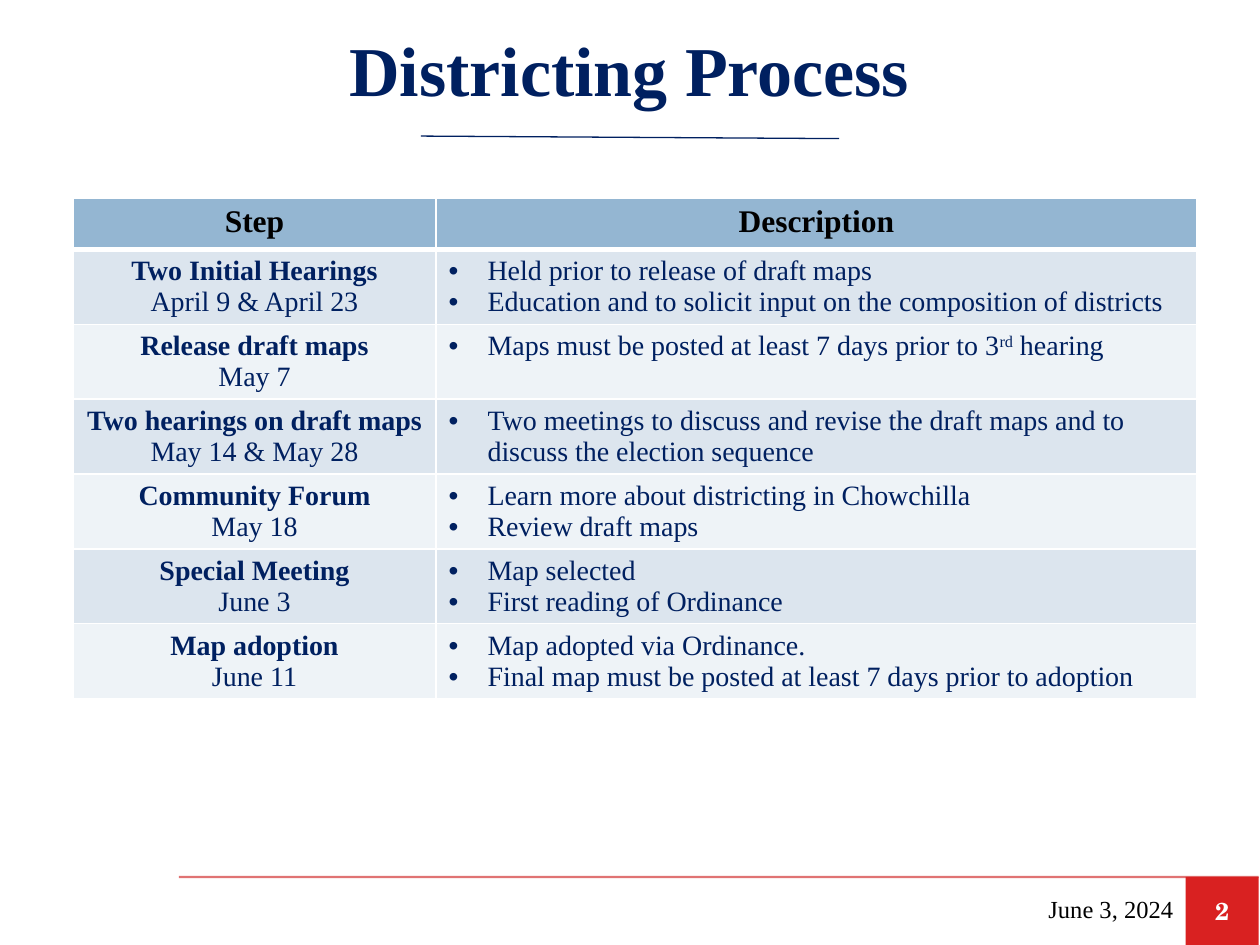
from lxml import etree
from pptx import Presentation
from pptx.dml.color import RGBColor
from pptx.enum.shapes import MSO_CONNECTOR, MSO_SHAPE
from pptx.enum.text import MSO_ANCHOR, MSO_AUTO_SIZE, PP_ALIGN
from pptx.oxml.ns import qn
from pptx.util import Inches, Pt

LEFT, CENTER, RIGHT = PP_ALIGN.LEFT, PP_ALIGN.CENTER, PP_ALIGN.RIGHT
MIDDLE = MSO_ANCHOR.MIDDLE

TITLE = "Districting Process"
DATE = "June 3, 2024"
PAGE = "2"
HEADERS = ("Step", "Description")
# Step name, dates, description bullets; a tuple bullet is (text, superscript, text)
STEPS = [
    ("Two Initial Hearings", "April 9 & April 23",
     ["Held prior to release of draft maps",
      "Education and to solicit input on the composition of districts"]),
    ("Release draft maps", "May 7",
     [("Maps must be posted at least 7 days prior to 3", "rd", " hearing")]),
    ("Two hearings on draft maps", "May 14 & May 28",
     ["Two meetings to discuss and revise the draft maps and to discuss the election sequence"]),
    ("Community Forum", "May 18",
     ["Learn more about districting in Chowchilla", "Review draft maps"]),
    ("Special Meeting", "June 3",
     ["Map selected", "First reading of Ordinance"]),
    ("Map adoption", "June 11",
     ["Map adopted via Ordinance.",
      "Final map must be posted at least 7 days prior to adoption"]),
]

SERIF = "Times New Roman"
THEME = {
    "navy": "002060", "white": "FFFFFF", "red": "D92121", "rule": "C80000",
    "header": "94B6D2", "bands": ("DCE5EE", "EEF3F7"),
    "title": {"name": SERIF, "size": 40, "bold": True, "color": "002060"},
    "head": {"name": SERIF, "size": 18, "bold": True, "color": "000000"},
    "step": {"name": SERIF, "size": 16, "bold": True, "color": "002060"},
    "body": {"name": SERIF, "size": 16, "bold": False, "color": "002060"},
    "date": {"name": SERIF, "size": 14, "bold": False, "color": "000000"},
    "page": {"name": "TeX Gyre Schola", "size": 14, "bold": True, "color": "FFFFFF"},
}
COLUMNS = (2.88, 6.04)
ROW_HEIGHT = 0.41  # rows grow to fit two lines of text
FOOTER_TOP = 6.96
BULLET_INDENT = Inches(0.31)


def rgb(value):
    return RGBColor.from_string(value)


def add_run(paragraph, text, style):
    run = paragraph.add_run()
    run.text = text
    formats = dict(THEME[style])
    run.font.color.rgb = rgb(formats.pop("color"))
    formats["size"] = Pt(formats["size"])
    for name, value in formats.items():
        setattr(run.font, name, value)
    return run


def write_lines(text_frame, lines, align):
    """Write (text, style) pairs, one paragraph each."""
    for index, (text, style) in enumerate(lines):
        paragraph = text_frame.add_paragraph() if index else text_frame.paragraphs[0]
        paragraph.alignment = align
        add_run(paragraph, text, style)


def write_bullets(text_frame, bullets):
    for index, bullet in enumerate(bullets):
        paragraph = text_frame.add_paragraph() if index else text_frame.paragraphs[0]
        paragraph.alignment = LEFT
        properties = paragraph._p.get_or_add_pPr()
        properties.set("marL", str(BULLET_INDENT))
        properties.set("indent", str(-BULLET_INDENT))
        etree.SubElement(properties, qn("a:buFont"), typeface="Arial")
        etree.SubElement(properties, qn("a:buChar"), char="•")
        parts = (bullet,) if isinstance(bullet, str) else bullet
        for position, part in enumerate(parts):
            run = add_run(paragraph, part, "body")
            if position == 1:
                run._r.get_or_add_rPr().set("baseline", "30000")


def add_line(slide, start, end, color, width, opacity=None):
    line = slide.shapes.add_connector(
        MSO_CONNECTOR.STRAIGHT, *(Inches(value) for value in start + end))
    line.line.color.rgb = rgb(color)
    line.line.width = Pt(width)
    if opacity:
        fill = line._element.spPr.find(".//" + qn("a:srgbClr"))
        etree.SubElement(fill, qn("a:alpha"), val=str(opacity * 1000))
    etree.SubElement(line._element.spPr, qn("a:effectLst"))


def style_cell(cell, fill, top=1, bottom=1):
    """Draw white borders (widths in points) and fill the cell."""
    properties = cell._tc.get_or_add_tcPr()
    for side, width in (("L", 1), ("R", 1), ("T", top), ("B", bottom)):
        border = etree.SubElement(properties, qn("a:ln" + side), w=str(Pt(width)))
        solid = etree.SubElement(border, qn("a:solidFill"))
        etree.SubElement(solid, qn("a:srgbClr"), val=THEME["white"])
    cell.fill.solid()
    cell.fill.fore_color.rgb = rgb(fill)


def add_steps_table(slide):
    rows = len(STEPS) + 1
    table = slide.shapes.add_table(
        rows, len(COLUMNS), Inches(0.58), Inches(1.57),
        Inches(sum(COLUMNS)), Inches(ROW_HEIGHT * rows)).table
    for column, width in zip(table.columns, COLUMNS):
        column.width = Inches(width)
    for row in table.rows:
        row.height = Inches(ROW_HEIGHT)
    for column, header in enumerate(HEADERS):
        cell = table.cell(0, column)
        style_cell(cell, THEME["header"], bottom=3)
        write_lines(cell.text_frame, [(header, "head")], CENTER)
    for row, (step, dates, bullets) in enumerate(STEPS, start=1):
        for column in range(len(COLUMNS)):
            style_cell(table.cell(row, column), THEME["bands"][(row - 1) % 2],
                       top=3 if row == 1 else 1)
        write_lines(table.cell(row, 0).text_frame,
                    [(step, "step"), (dates, "body")], CENTER)
        write_bullets(table.cell(row, 1).text_frame, bullets)


def add_footer(slide):
    add_line(slide, (1.42, FOOTER_TOP), (9.99, FOOTER_TOP), THEME["rule"], 1.25, opacity=55)
    badge = slide.shapes.add_shape(
        MSO_SHAPE.RECTANGLE, Inches(9.41), Inches(FOOTER_TOP), Inches(0.58), Inches(0.54))
    badge.shadow.inherit = False
    badge.fill.solid()
    badge.fill.fore_color.rgb = rgb(THEME["red"])
    badge.line.fill.background()
    date = slide.shapes.add_textbox(Inches(6.49), Inches(7.01), Inches(2.92), Inches(0.4))
    for shape, text, style, align in ((badge, PAGE, "page", CENTER),
                                      (date, DATE, "date", RIGHT)):
        shape.text_frame.word_wrap = True
        shape.text_frame.vertical_anchor = MIDDLE
        write_lines(shape.text_frame, [(text, style)], align)


def main():
    presentation = Presentation()
    presentation.slide_width, presentation.slide_height = Inches(10), Inches(7.5)
    slide = presentation.slides.add_slide(presentation.slide_layouts[5])
    title = slide.shapes.title
    title.left, title.top, title.width, title.height = (
        Inches(value) for value in (0.37, 0, 9.25, 1.08))
    title.text_frame.auto_size = MSO_AUTO_SIZE.NONE
    title.text_frame.vertical_anchor = MIDDLE
    write_lines(title.text_frame, [(TITLE, "title")], CENTER)
    add_line(slide, (3.34, 1.08), (6.66, 1.1), THEME["navy"], 0.75)
    add_steps_table(slide)
    add_footer(slide)
    presentation.save("out.pptx")


if __name__ == "__main__":
    main()
